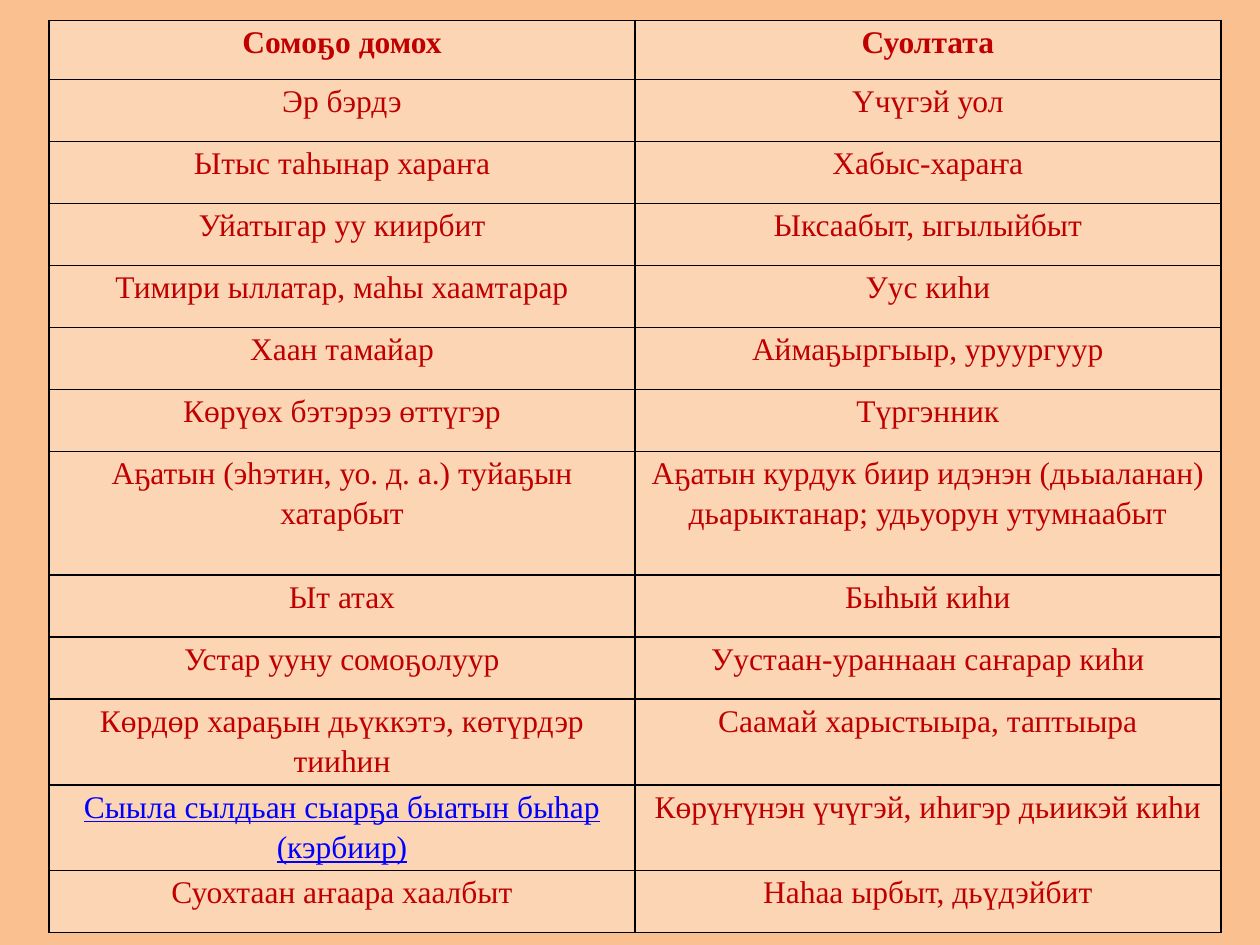
import dataclasses

import lxml.etree
import pptx
import pptx.dml.color
import pptx.enum.text
import pptx.oxml.ns
import pptx.util

Cm = pptx.util.Cm
Pt = pptx.util.Pt
RGB = pptx.dml.color.RGBColor.from_string


@dataclasses.dataclass(frozen=True)
class Theme:
    background: str = "FAC090"
    cell: str = "FCD5B5"
    border: str = "000000"
    text: str = "C00000"
    marked: str = "0000FF"
    font: str = "Times New Roman"
    size: float = 18
    line_spacing: float = 1.15
    border_width: float = 1


THEME = Theme()

HEADINGS = ("Сомоҕо домох", "Суолтата")
MARKED_IDIOM = "Сыыла сылдьан сыарҕа быатын быhар (кэрбиир)"
IDIOMS = [
    ("Эр бэрдэ", "Үчүгэй уол"),
    ("Ытыс таһынар хараҥа", "Хабыс-хараҥа"),
    ("Уйатыгар уу киирбит", "Ыксаабыт, ыгылыйбыт"),
    ("Тимири ыллатар, маһы хаамтарар", "Уус киһи"),
    ("Хаан тамайар", "Аймаҕыргыыр, уруургуур"),
    ("Көрүөх бэтэрээ өттүгэр", "Түргэнник"),
    ("Аҕатын (эһэтин, уо. д. а.) туйаҕын хатарбыт",
     "Аҕатын курдук биир идэнэн (дьыаланан) дьарыктанар; удьуорун утумнаабыт"),
    ("Ыт атах", "Быhый киhи"),
    ("Устар ууну сомоҕолуур", "Уустаан-ураннаан саҥарар киһи"),
    ("Көрдөр хараҕын дьүккэтэ, көтүрдэр тииһин", "Саамай харыстыыра, таптыыра"),
    (MARKED_IDIOM, "Көрүҥүнэн үчүгэй, иhигэр дьиикэй киhи"),
    ("Суохтаан аҥаара хаалбыт", "Наһаа ырбыт, дьүдэйбит"),
]

# Row heights in cm: single-line rows share one height
ROW_HEIGHT = 1.25
SPECIAL_HEIGHTS = {0: 1.19, 7: 2.49, 10: 1.73, 11: 1.73}
COLUMN_WIDTH = 11.81


def apply_format(target, values):
    for attribute, value in values.items():
        setattr(target, attribute, value)


def add_borders(cell):
    properties = cell._tc.get_or_add_tcPr()
    qn = pptx.oxml.ns.qn
    for position, side in enumerate(("a:lnL", "a:lnR", "a:lnT", "a:lnB")):
        line = lxml.etree.Element(qn(side), w=str(Pt(THEME.border_width)))
        fill = lxml.etree.SubElement(line, qn("a:solidFill"))
        lxml.etree.SubElement(fill, qn("a:srgbClr"), val=THEME.border)
        properties.insert(position, line)


def fill_cell(cell, wording, heading):
    marked = wording == MARKED_IDIOM
    apply_format(cell, {
        "margin_left": Cm(0.18), "margin_right": Cm(0.18),
        "margin_top": 0, "margin_bottom": 0,
    })
    cell.fill.solid()
    cell.fill.fore_color.rgb = RGB(THEME.cell)
    add_borders(cell)

    paragraph = cell.text_frame.paragraphs[0]
    apply_format(paragraph, {
        "alignment": pptx.enum.text.PP_ALIGN.CENTER,
        "line_spacing": THEME.line_spacing,
    })
    phrase = paragraph.add_run()
    phrase.text = wording
    apply_format(phrase.font, {
        "name": THEME.font, "size": Pt(THEME.size),
        "bold": heading, "underline": marked,
    })
    phrase.font.color.rgb = RGB(THEME.marked if marked else THEME.text)


def add_idiom_table(slide):
    entries = [HEADINGS, *IDIOMS]
    heights = [SPECIAL_HEIGHTS.get(i, ROW_HEIGHT) for i in range(len(entries))]
    idioms = slide.shapes.add_table(
        len(entries), len(HEADINGS), Cm(0.99), Cm(0.41),
        Cm(COLUMN_WIDTH * len(HEADINGS)), Cm(sum(heights))).table
    for column in idioms.columns:
        column.width = Cm(COLUMN_WIDTH)
    for i, (entry, height) in enumerate(zip(entries, heights)):
        idioms.rows[i].height = Cm(height)
        for j, wording in enumerate(entry):
            fill_cell(idioms.cell(i, j), wording, heading=i == 0)


def main():
    # Page
    presentation = pptx.Presentation()
    apply_format(presentation, {"slide_width": Cm(25.4), "slide_height": Cm(19.05)})
    slide = presentation.slides.add_slide(presentation.slide_layouts[6])
    slide.background.fill.solid()
    slide.background.fill.fore_color.rgb = RGB(THEME.background)

    # Idioms and their meanings
    add_idiom_table(slide)
    presentation.save("out.pptx")


if __name__ == "__main__":
    main()
